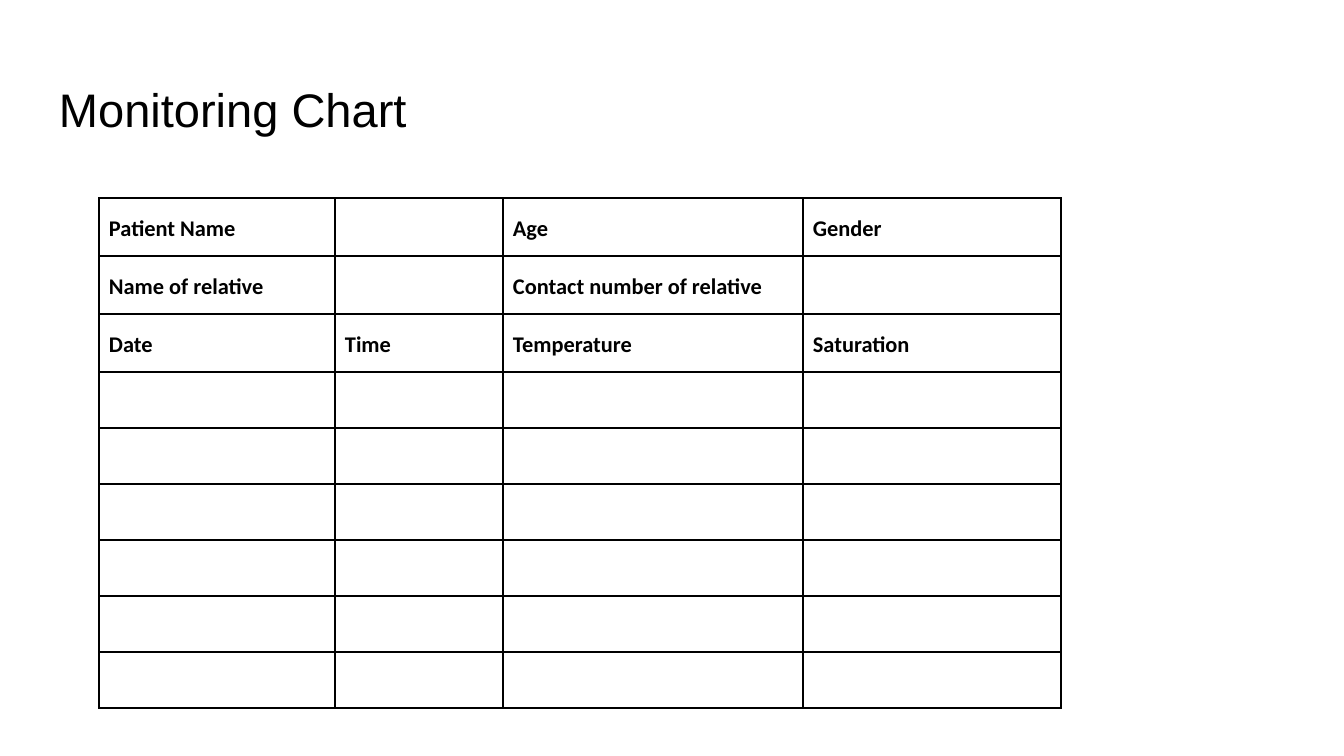
from lxml.etree import SubElement
from pptx import Presentation
from pptx.dml.color import RGBColor
from pptx.enum.text import MSO_ANCHOR as Anchor, PP_ALIGN as Align
from pptx.oxml.ns import qn
from pptx.util import Emu, Pt

BLACK = RGBColor(0, 0, 0)
PX = 914400 / 134.4
COLUMNS = (236, 168, 300, 258)
HEADINGS = (
    ("Patient Name", "", "Age", "Gender"),
    ("Name of relative", "", "Contact number of relative", ""),
    ("Date", "Time", "Temperature", "Saturation"),
)
BLANK_ROWS = 6
HEADING_HEIGHT, BLANK_HEIGHT = 58, 56


def px(length):
    """Turn pixels into EMU."""
    return Emu(round(length * PX))


def set_margins(target, across, down):
    """Set the inner margins of a cell or text frame."""
    target.margin_left = target.margin_right = px(across)
    target.margin_top = target.margin_bottom = px(down)


def style_text(para, font_name, size, bold):
    """Format every run of a paragraph as left-aligned black text."""
    para.alignment = Align.LEFT
    for span in para.runs:
        span.font.name = font_name
        span.font.size = Pt(size)
        span.font.bold = bold
        span.font.color.rgb = BLACK


def add_borders(cell):
    """Draw a thin black line on each side of a cell."""
    properties = cell._tc.get_or_add_tcPr()
    for index, side in enumerate(("a:lnL", "a:lnR", "a:lnT", "a:lnB")):
        line = SubElement(properties, qn(side), w=str(Pt(1)))
        properties.insert(index, line)
        fill = SubElement(line, qn("a:solidFill"))
        SubElement(fill, qn("a:srgbClr"), val=str(BLACK))


def fill_title(page, left, top, width, height):
    """Place the page heading in the title placeholder."""
    title = page.shapes.title
    title.left, title.top, title.width, title.height = map(px, (left, top, width, height))
    frame = title.text_frame
    frame.text = "Monitoring Chart"
    frame.vertical_anchor = Anchor.MIDDLE
    set_margins(frame, 13, 13)
    style_text(frame.paragraphs[0], "Arial", 25.2, False)


def add_monitoring_table(page, left, top):
    """Build the patient table from its top left corner."""
    blank = ("",) * len(COLUMNS)
    rows = HEADINGS + (blank,) * BLANK_ROWS
    heights = [HEADING_HEIGHT] * len(HEADINGS) + [BLANK_HEIGHT] * BLANK_ROWS
    frame = page.shapes.add_table(
        len(rows), len(COLUMNS), px(left), px(top), px(sum(COLUMNS)), px(sum(heights))
    )
    table = frame.table
    table.first_row = table.horz_banding = False
    for column, width in zip(table.columns, COLUMNS):
        column.width = px(width)
    for row, height, texts in zip(table.rows, heights, rows):
        row.height = px(height)
        for cell, text in zip(row.cells, texts):
            cell.fill.background()
            add_borders(cell)
            if text:
                cell.text = text
                set_margins(cell, 10, 13)
                para = cell.text_frame.paragraphs[0]
                para.line_spacing = 1.15
                style_text(para, "Calibri", 12, True)


def main():
    """Build and save the deck."""
    deck = Presentation()
    deck.slide_width, deck.slide_height = px(1344), px(756)
    page = deck.slides.add_slide(deck.slide_layouts.get_by_name("Title Only"))
    fill_title(page, 46, 66, 1252, 85)
    add_monitoring_table(page, 99, 198)
    deck.save("out.pptx")


if __name__ == "__main__":
    main()
